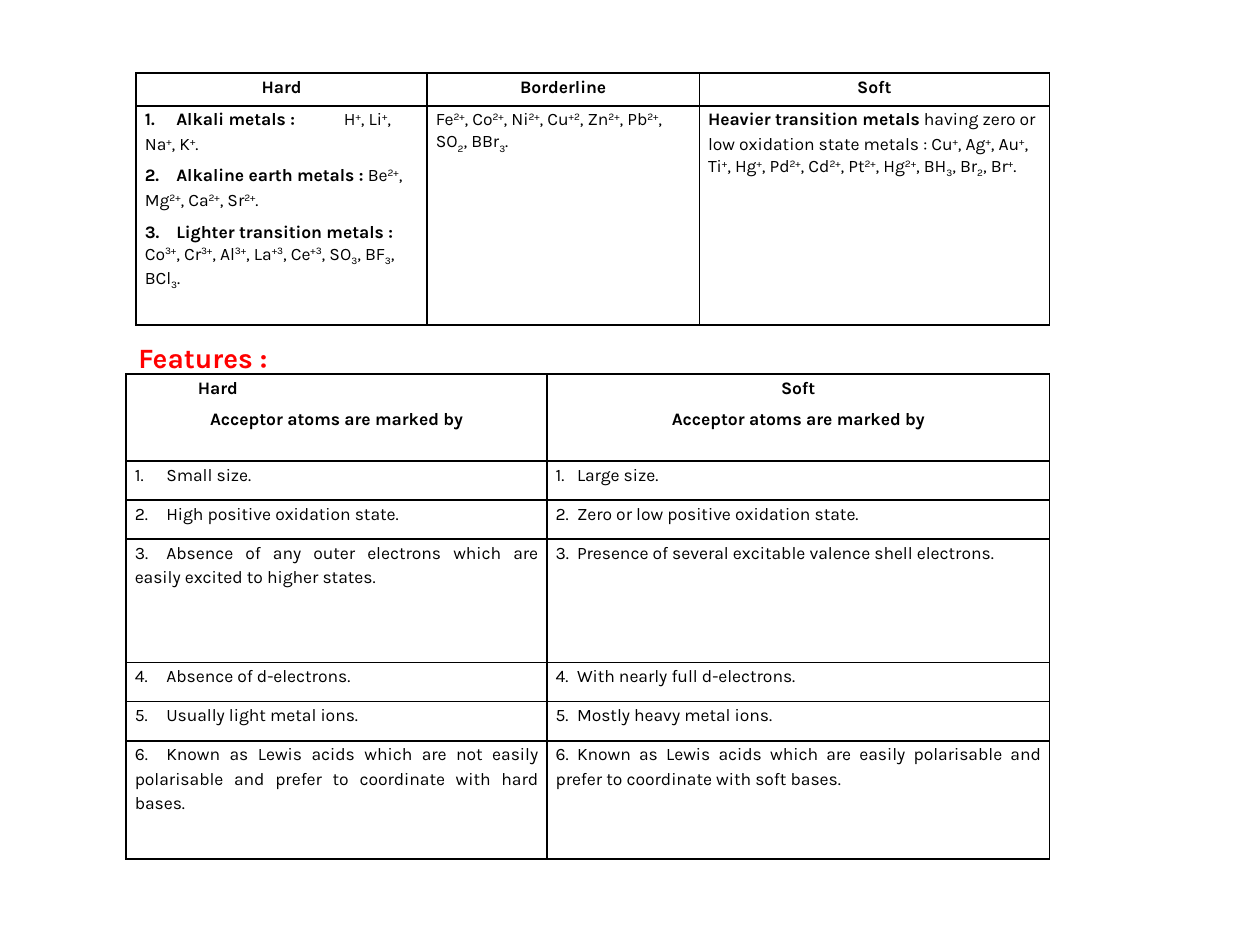
from lxml import etree
from pptx import Presentation
from pptx import util as u
from pptx.dml.color import RGBColor
from pptx.enum import text
from pptx.oxml import ns, xmlchemy

CENTER, LEFT, JUSTIFY = text.PP_ALIGN.CENTER, text.PP_ALIGN.LEFT, text.PP_ALIGN.JUSTIFY
FONT, INK, RED = "Karla", "000000", "FF0000"
BOLD, SUPER, SUB = "*", "^", "_"

ACID_HEADERS = ["*Hard*", "*Borderline*", "*Soft*"]
ACID_EXAMPLES = [
    [
        "*1.\tAlkali metals :*\tH^+^, Li^+^, Na^+^, K^+^.",
        "*2.\tAlkaline earth metals : *Be^2+^, Mg^2+^, Ca^2+^, Sr^2+^.",
        "*3.\tLighter transition metals : *Co^3+^, Cr^3+^, Al^3+^, La^+3^, Ce^+3^, "
        "SO_3_, BF_3_, BCl_3_.",
    ],
    ["Fe^2+^, Co^2+^, Ni^2+^, Cu^+2^, Zn^2+^, Pb^2+^, SO_2_, BBr_3_."],
    [
        "*Heavier transition metals* having zero or low oxidation state metals : "
        "Cu^+^, Ag^+^, Au^+^, Ti^+^, Hg^+^, Pd^2+^, Cd^2+^, Pt^2+^, Hg^2+^, "
        "BH_3_, Br_2_, Br^+^."
    ],
]
MARKED = "*Acceptor atoms are marked by*"
FEATURES = [
    ("Small size.", "Large size.", 2),
    ("High positive oxidation state.", "Zero or low positive oxidation state.", 1),
    ("Absence of any outer electrons which are easily excited to higher states.",
     "Presence of several excitable valence shell electrons.", 1),
    ("Absence of d-electrons.", "With nearly full d-electrons.", 1),
    ("Usually light metal ions.", "Mostly heavy metal ions.", 2),
    ("Known as Lewis acids which are not easily polarisable and prefer to "
     "coordinate with hard bases.",
     "Known as Lewis acids which are easily polarisable and prefer to "
     "coordinate with soft bases.", 2),
]


def set_all(target, values):
    for name, value in values.items():
        setattr(target, name, value)


def color(value):
    return RGBColor.from_string(value)


def add_run(paragraph, content, marks, size, ink):
    run = paragraph.add_run()
    run.text = content
    set_all(run.font, {"name": FONT, "size": u.Pt(size), "bold": BOLD in marks})
    run.font.color.rgb = color(ink)
    for mark, baseline in ((SUPER, "30000"), (SUB, "-25000")):
        if mark in marks:
            run.font._element.set("baseline", baseline)


def add_marked_text(paragraph, marked, size=10, ink=INK):
    marks, content = set(), ""
    for letter in marked:
        if letter in (BOLD, SUPER, SUB):
            if content:
                add_run(paragraph, content, marks, size, ink)
            marks, content = marks ^ {letter}, ""
        else:
            content += letter
    if content:
        add_run(paragraph, content, marks, size, ink)


def set_tabs(paragraph, stops):
    tab_list = etree.SubElement(paragraph._p.get_or_add_pPr(), ns.qn("a:tabLst"))
    for stop in stops:
        etree.SubElement(tab_list, ns.qn("a:tab"), pos=str(u.Inches(stop)), algn="l")


def draw_borders(cell):
    properties = cell._tc.get_or_add_tcPr()
    for side in ("a:lnL", "a:lnR", "a:lnT", "a:lnB"):
        line = etree.SubElement(properties, ns.qn(side), w=str(u.Pt(1)))
        fill = etree.SubElement(line, ns.qn("a:solidFill"))
        etree.SubElement(fill, ns.qn("a:srgbClr"), val=INK)


def fill_cell(cell, lines, alignment, gap=2, stops=()):
    set_all(cell, {"margin_left": u.Inches(0.07), "margin_right": u.Inches(0.07),
                   "margin_top": 0, "margin_bottom": 0})
    draw_borders(cell)
    cell.fill.background()
    for index, line in enumerate(lines):
        frame = cell.text_frame
        paragraph = frame.add_paragraph() if index else frame.paragraphs[0]
        set_all(paragraph, {"alignment": alignment, "line_spacing": u.Pt(14),
                            "space_before": u.Pt(gap), "space_after": u.Pt(gap)})
        if stops:
            set_tabs(paragraph, stops)
        add_marked_text(paragraph, line)


def add_grid(slide, left, top, widths, heights):
    frame = slide.shapes.add_table(
        len(heights), len(widths), u.Inches(left), u.Inches(top),
        u.Inches(sum(widths)), u.Inches(sum(heights)))
    table = frame.table
    set_all(table, {"first_row": False, "horz_banding": False})
    for column, width in zip(table.columns, widths):
        column.width = u.Inches(width)
    for row, height in zip(table.rows, heights):
        row.height = u.Inches(height)
    return table


def add_acid_table(slide):
    table = add_grid(slide, 1.08, 0.58, [2.31, 2.16, 2.78], [0.26, 1.74])
    for column, (header, examples) in enumerate(zip(ACID_HEADERS, ACID_EXAMPLES)):
        fill_cell(table.cell(0, column), [header], CENTER)
        fill_cell(table.cell(1, column), examples, LEFT, stops=[0.25, 1.58])


def add_feature_table(slide):
    table = add_grid(slide, 1, 2.97, [3.34, 3.99],
                     [0.69, 0.31, 0.31, 0.98, 0.31, 0.31, 0.94])
    fill_cell(table.cell(0, 0), ["\t*Hard*", MARKED], JUSTIFY, stops=[0.5])
    table.cell(0, 0).text_frame.paragraphs[1].alignment = CENTER
    fill_cell(table.cell(0, 1), ["*Soft*", MARKED], CENTER)
    for number, (hard, soft, gap) in enumerate(FEATURES, 1):
        for column, (feature, stop) in enumerate(((hard, 0.25), (soft, 0.17))):
            fill_cell(table.cell(number, column), [f"{number}.\t{feature}"],
                      JUSTIFY, gap, [stop])


def add_heading(slide):
    box = slide.shapes.add_textbox(u.Inches(1), u.Inches(2.65), u.Inches(6.92), u.Inches(0.37))
    set_all(box.text_frame, {"word_wrap": True, "vertical_anchor": text.MSO_ANCHOR.MIDDLE,
                             "auto_size": text.MSO_AUTO_SIZE.SHAPE_TO_FIT_TEXT})
    paragraph = box.text_frame.paragraphs[0]
    paragraph.alignment = JUSTIFY
    add_marked_text(paragraph, "*Features :*", 16, RED)


def main():
    presentation = Presentation()
    set_all(presentation, {"slide_width": u.Inches(10), "slide_height": u.Inches(7.5)})
    slide = presentation.slides.add_slide(presentation.slide_layouts[6])
    add_acid_table(slide)
    add_feature_table(slide)
    add_heading(slide)
    presentation.save("out.pptx")


if __name__ == "__main__":
    main()
